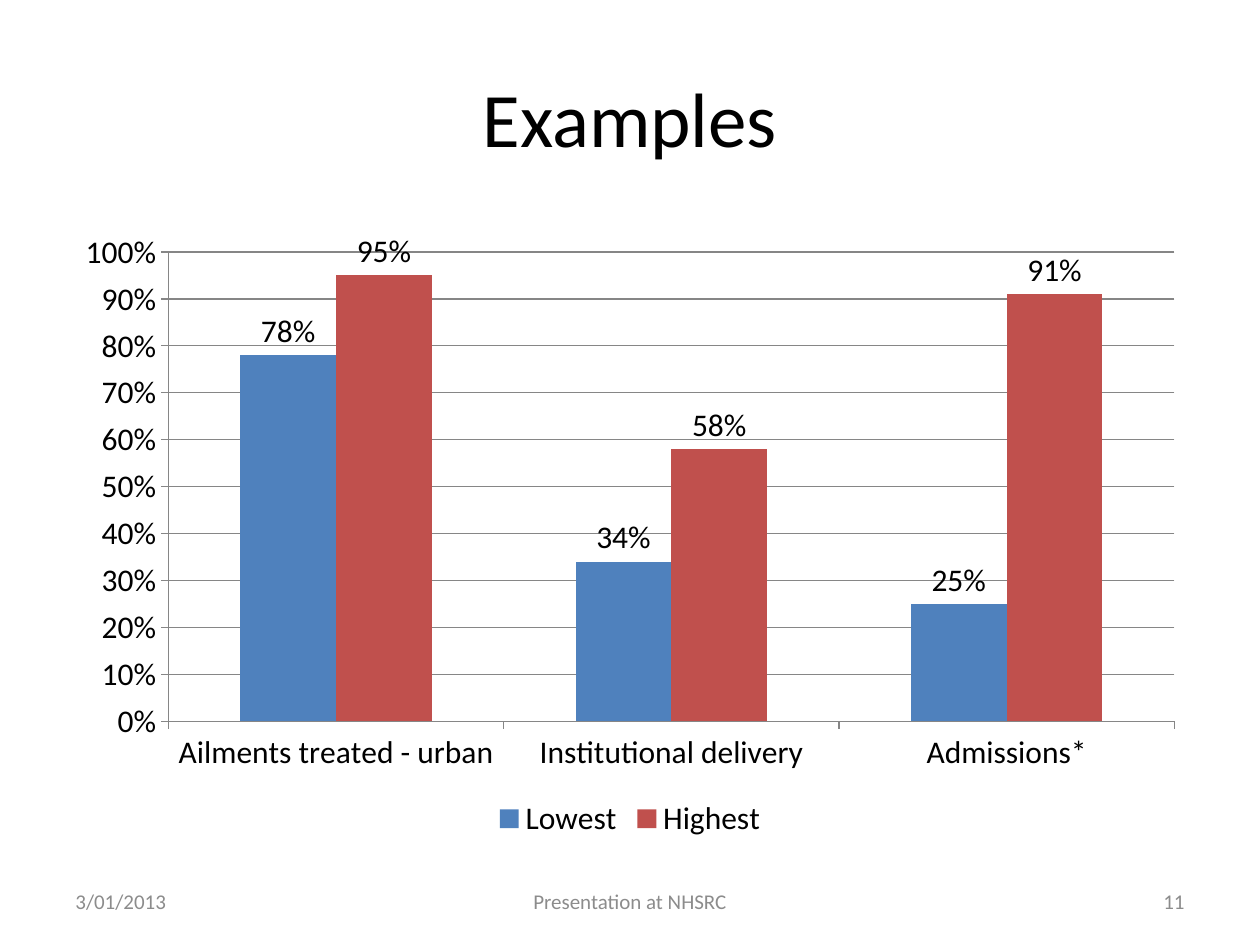
from dataclasses import dataclass

from pptx import Presentation
from pptx.chart.data import CategoryChartData
from pptx.dml.color import RGBColor
from pptx.enum.chart import XL_CHART_TYPE, XL_LABEL_POSITION, XL_LEGEND_POSITION, XL_TICK_MARK
from pptx.enum.text import MSO_ANCHOR, PP_ALIGN
from pptx.util import Pt

LEFT, CENTER, RIGHT = PP_ALIGN.LEFT, PP_ALIGN.CENTER, PP_ALIGN.RIGHT
MIDDLE = MSO_ANCHOR.MIDDLE
COLUMN_CLUSTERED = XL_CHART_TYPE.COLUMN_CLUSTERED
OUTSIDE_END = XL_LABEL_POSITION.OUTSIDE_END
LEGEND_BOTTOM = XL_LEGEND_POSITION.BOTTOM
TICK_OUTSIDE = XL_TICK_MARK.OUTSIDE


@dataclass(frozen=True)
class Theme:
    font: str = "Calibri"
    text: RGBColor = RGBColor(0, 0, 0)
    muted: RGBColor = RGBColor(0x8C, 0x8C, 0x8C)
    grid: RGBColor = RGBColor(0x86, 0x86, 0x86)
    lowest: RGBColor = RGBColor(0x4F, 0x81, 0xBD)
    highest: RGBColor = RGBColor(0xC0, 0x50, 0x4D)
    title_size: int = 44
    chart_size: int = 18
    footer_size: int = 12


THEME = Theme()
PERCENT = "0%"
CATEGORIES = ["Ailments treated - urban", "Institutional delivery", "Admissions*"]
SERIES = [
    ("Lowest", (0.78, 0.34, 0.25), THEME.lowest),
    ("Highest", (0.95, 0.58, 0.91), THEME.highest),
]
FOOTERS = [
    ("3/01/2013", 36, 168, LEFT),
    ("Presentation at NHSRC", 246, 228, CENTER),
    ("11", 516, 168, RIGHT),
]


def apply_format(target, values):
    for name, value in values.items():
        setattr(target, name, value)


def format_font(font, size, color):
    apply_format(font, {"name": THEME.font, "size": Pt(size)})
    font.color.rgb = color


def place(shape, left, top, width, height):
    apply_format(shape, {"left": Pt(left), "top": Pt(top), "width": Pt(width), "height": Pt(height)})


def write_text(shape, text, size, color, alignment):
    apply_format(shape.text_frame, {"text": text, "word_wrap": True, "vertical_anchor": MIDDLE})
    paragraph = shape.text_frame.paragraphs[0]
    paragraph.alignment = alignment
    format_font(paragraph.runs[0].font, size, color)


def add_title(slide, text):
    title = slide.shapes.title
    place(title, 36, 21.6, 648, 90)
    write_text(title, text, THEME.title_size, THEME.text, CENTER)


def add_footer(slide, text, left, width, alignment):
    footer = slide.shapes.add_textbox(Pt(left), Pt(500.5), Pt(width), Pt(28.8))
    write_text(footer, text, THEME.footer_size, THEME.muted, alignment)


def format_line(line):
    line.color.rgb = THEME.grid
    line.width = Pt(0.75)


def format_series(series, color):
    series.format.fill.solid()
    series.format.fill.fore_color.rgb = color
    apply_format(series.data_labels, {
        "show_value": True,
        "position": OUTSIDE_END,
        "number_format": PERCENT,
        "number_format_is_linked": False,
    })


def format_axes(chart):
    for axis in (chart.category_axis, chart.value_axis):
        axis.major_tick_mark = TICK_OUTSIDE
        format_line(axis.format.line)
    value_axis = chart.value_axis
    apply_format(value_axis, {
        "minimum_scale": 0,
        "maximum_scale": 1,
        "major_unit": 0.1,
        "has_major_gridlines": True,
    })
    apply_format(value_axis.tick_labels, {"number_format": PERCENT, "number_format_is_linked": False})
    format_line(value_axis.major_gridlines.format.line)


def add_column_chart(slide):
    data = CategoryChartData(number_format=PERCENT)
    data.categories = CATEGORIES
    for name, values, _ in SERIES:
        data.add_series(name, values)
    chart = slide.shapes.add_chart(
        COLUMN_CLUSTERED, Pt(36), Pt(126), Pt(648), Pt(356.4), data
    ).chart
    apply_format(chart, {"has_title": False, "has_legend": True})
    format_font(chart.font, THEME.chart_size, THEME.text)
    apply_format(chart.legend, {"position": LEGEND_BOTTOM, "include_in_layout": False})
    apply_format(chart.plots[0], {"gap_width": 150, "overlap": 0, "vary_by_categories": False})
    for series, (_, _, color) in zip(chart.plots[0].series, SERIES):
        format_series(series, color)
    format_axes(chart)


def main():
    presentation = Presentation()
    apply_format(presentation, {"slide_width": Pt(720), "slide_height": Pt(540)})
    slide = presentation.slides.add_slide(presentation.slide_layouts[5])
    add_title(slide, "Examples")
    add_column_chart(slide)
    for footer in FOOTERS:
        add_footer(slide, *footer)
    presentation.save("out.pptx")


if __name__ == "__main__":
    main()
